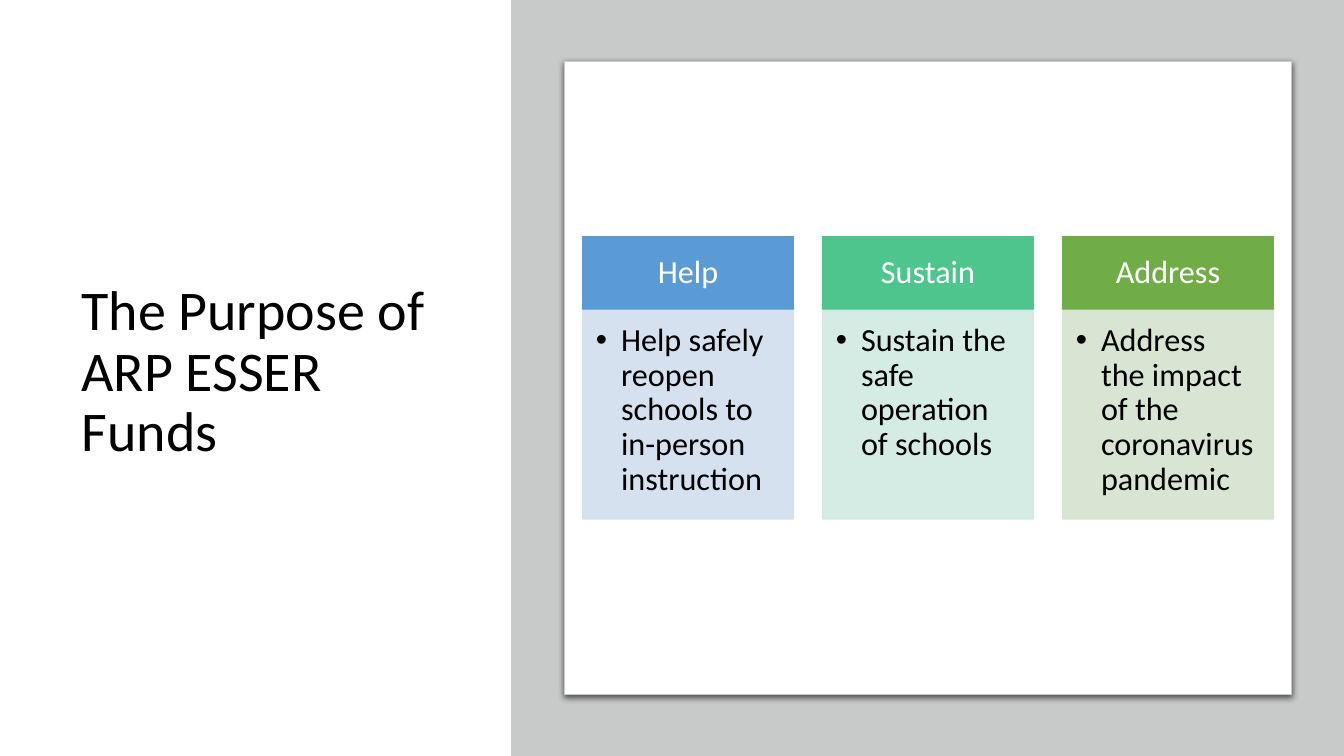
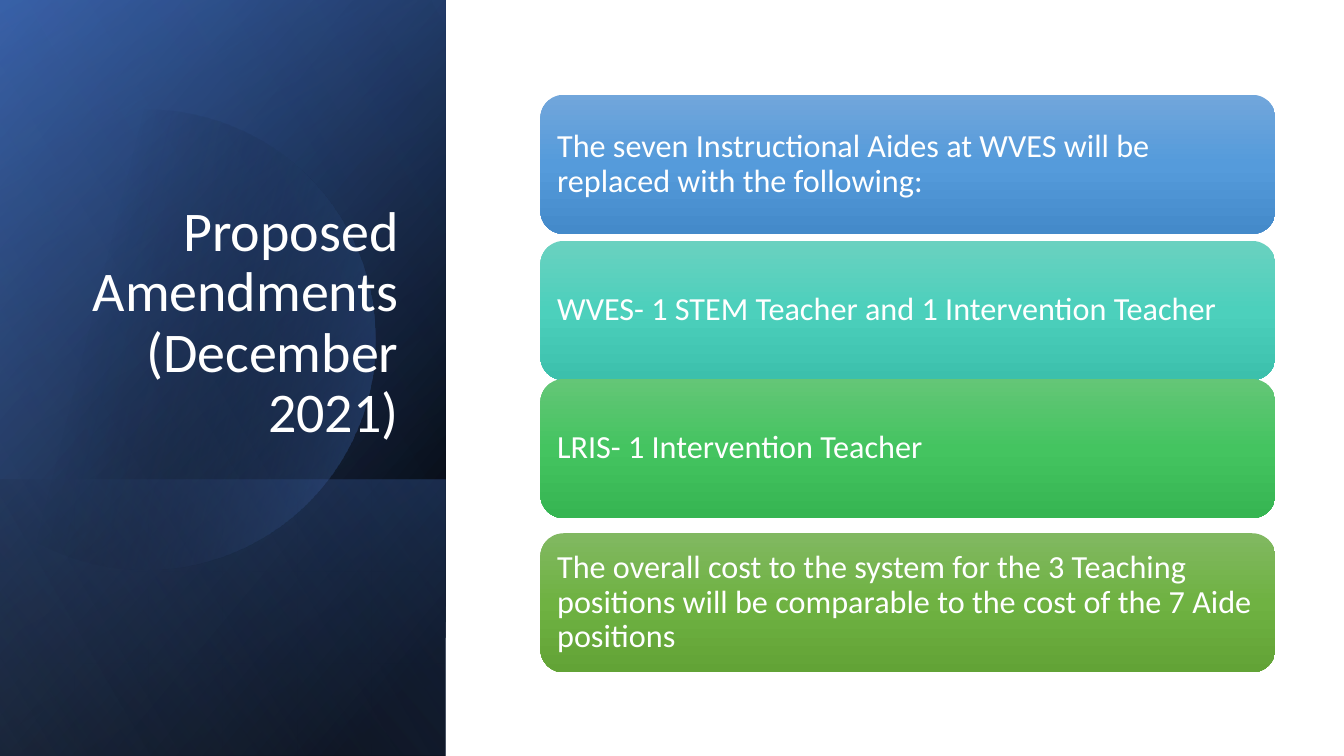
from math import acos, cos, sin

from lxml.etree import SubElement
from pptx import Presentation
from pptx.dml.color import RGBColor
from pptx.enum.shapes import MSO_SHAPE
from pptx.enum.text import MSO_ANCHOR, PP_ALIGN
from pptx.oxml.ns import qn
from pptx.util import Inches, Pt

# Shared style
FONT = "Calibri"
TITLE_SIZE, BODY_SIZE = 40, 23
BLACK = RGBColor(0x00, 0x00, 0x00)
WHITE = RGBColor(0xFF, 0xFF, 0xFF)
GRAY = RGBColor(0xC8, 0xCA, 0xCA)
NAVY = RGBColor(0x2F, 0x55, 0x97)
BLUE = RGBColor(0x44, 0x72, 0xC4)
PALE_BLUE = RGBColor(0x8F, 0xAA, 0xDC)


def write(shape, text, size=BODY_SIZE, color=WHITE, align=PP_ALIGN.LEFT,
          anchor=MSO_ANCHOR.MIDDLE, margins=(0.1, 0.1, 0.1, 0.1), bullet=False):
    """Fill a shape with one formatted paragraph; margins are left, top, right, bottom."""
    frame = shape.text_frame
    frame.word_wrap = True
    frame.vertical_anchor = anchor
    (frame.margin_left, frame.margin_top,
     frame.margin_right, frame.margin_bottom) = map(Inches, margins)
    para = frame.paragraphs[0]
    para.alignment = align
    para.line_spacing = 0.9
    span = para.add_run()
    span.text = text
    span.font.name = FONT
    span.font.size = Pt(size)
    span.font.color.rgb = color
    if bullet:
        properties = para._p.get_or_add_pPr()
        properties.set("marL", str(Inches(0.25)))
        properties.set("indent", str(Inches(-0.25)))
        SubElement(properties, qn("a:buFont"), typeface="Arial")
        SubElement(properties, qn("a:buChar"), char="•")


def shade(shape, angle, stops):
    """Give a shape a clockwise gradient of (position, colour, opacity) stops in percent."""
    shape.shadow.inherit = False
    shape.line.fill.background()
    shape.fill.gradient()
    shape.fill.gradient_angle = (360 - angle) % 360
    stop_list = shape._element.spPr.find(qn("a:gradFill")).find(qn("a:gsLst"))
    for old_stop in list(stop_list):
        stop_list.remove(old_stop)
    for position, color, opacity in stops:
        stop = SubElement(stop_list, qn("a:gs"), pos=str(position * 1000))
        tint = SubElement(stop, qn("a:srgbClr"), val=str(color))
        SubElement(tint, qn("a:alpha"), val=str(opacity * 1000))


deck = Presentation()
deck.slide_width, deck.slide_height = Inches(13.33), Inches(7.5)
blank = deck.slide_layouts[6]

# Slide 1: title, gray band and white card
page = deck.slides.add_slide(blank)
title = page.shapes.add_textbox(Inches(0.71), Inches(0.69), Inches(4.01), Inches(6.02))
write(title, "The Purpose of ARP ESSER Funds", size=TITLE_SIZE, color=BLACK,
      margins=(0.1, 0.05, 0.1, 0.05))

band = page.shapes.add_shape(MSO_SHAPE.RECTANGLE, Inches(5.07), 0, Inches(8.26), Inches(7.5))
card = page.shapes.add_shape(MSO_SHAPE.RECTANGLE, Inches(5.6), Inches(0.61),
                             Inches(7.21), Inches(6.28))
for panel, color in ((band, GRAY), (card, WHITE)):
    panel.shadow.inherit = False
    panel.fill.solid()
    panel.fill.fore_color.rgb = color
band.line.fill.background()
card.line.color.rgb = GRAY
card.line.width = Pt(0.75)
effects = card._element.spPr.find(qn("a:effectLst"))
shadow = SubElement(effects, qn("a:outerShdw"), blurRad=str(Pt(4.5)), dist=str(Pt(1.5)),
                    dir="5400000", algn="t", rotWithShape="0")
shadow_color = SubElement(shadow, qn("a:srgbClr"), val=str(BLACK))
SubElement(shadow_color, qn("a:alpha"), val="63000")

# Slide 1: three columns, each a header over a pale body
columns = [
    ("Help", "Help safely reopen schools to in-person instruction",
     RGBColor(0x5B, 0x9B, 0xD5), RGBColor(0xD2, 0xDE, 0xEF)),
    ("Sustain", "Sustain the safe operation of schools",
     RGBColor(0x4D, 0xC5, 0x8D), RGBColor(0xD0, 0xEA, 0xE1)),
    ("Address", "Address the impact of the coronavirus pandemic",
     RGBColor(0x70, 0xAD, 0x47), RGBColor(0xD5, 0xE3, 0xCF)),
]
for index, (heading, detail, strong, pale) in enumerate(columns):
    left = Inches(5.78 + 2.38 * index)
    header = page.shapes.add_shape(MSO_SHAPE.RECTANGLE, left, Inches(2.35),
                                   Inches(2.09), Inches(0.72))
    body = page.shapes.add_shape(MSO_SHAPE.RECTANGLE, left, Inches(3.08),
                                 Inches(2.09), Inches(2.07))
    for box, color in ((header, strong), (body, pale)):
        box.shadow.inherit = False
        box.fill.solid()
        box.fill.fore_color.rgb = color
        box.line.color.rgb = color
        box.line.width = Pt(1)
    for tint in body._element.spPr.iter(qn("a:srgbClr")):
        SubElement(tint, qn("a:alpha"), val="90000")
    write(header, heading, align=PP_ALIGN.CENTER, margins=(0.18, 0.1, 0.18, 0.1))
    write(body, detail, color=BLACK, anchor=MSO_ANCHOR.TOP,
          margins=(0.13, 0.13, 0.18, 0.2), bullet=True)

# Slide 2: dark side panel built from gradient layers
page = deck.slides.add_slide(blank)
PANEL_WIDTH = 4.42
layers = [
    (0, 7.5, 220, [(8, BLACK, 100), (100, NAVY, 100)]),
    (0, 7.5, 240, [(0, BLACK, 0), (99, BLUE, 46)]),
    (4.76, 2.74, 140, [(2, BLUE, 29), (100, BLACK, 30)]),
]
for top, height, angle, stops in layers:
    layer = page.shapes.add_shape(MSO_SHAPE.RECTANGLE, 0, Inches(top),
                                  Inches(PANEL_WIDTH), Inches(height))
    shade(layer, angle, stops)

# Slide 2: disc cut off by the left edge of the slide
CENTER_X, CENTER_Y, RADIUS, STEPS = 1.44, 3.37, 2.28, 90
limit = acos(-CENTER_X / RADIUS)
turns = [limit * (2 * step / STEPS - 1) for step in range(STEPS + 1)]
points = [(Inches(CENTER_X + RADIUS * cos(turn)), Inches(CENTER_Y + RADIUS * sin(turn)))
          for turn in turns]
outline = page.shapes.build_freeform(*points[0])
outline.add_line_segments(points[1:], close=True)
shade(outline.convert_to_shape(), 14, [(29, BLACK, 0), (100, BLUE, 43)])

glow = page.shapes.add_shape(MSO_SHAPE.RECTANGLE, 0, 0, Inches(PANEL_WIDTH), Inches(7.5))
shade(glow, 150, [(0, BLACK, 0), (99, PALE_BLUE, 11)])

title = page.shapes.add_textbox(Inches(0.64), Inches(1.84), Inches(3.41), Inches(2.62))
write(title, "Proposed Amendments (December 2021)", size=TITLE_SIZE, align=PP_ALIGN.RIGHT,
      anchor=MSO_ANCHOR.BOTTOM, margins=(0.1, 0.05, 0.1, 0.05))

# Slide 2: amendment boxes, each shaded from light to dark
amendments = [
    (0.94, "The seven Instructional Aides at WVES will be replaced with the following:",
     RGBColor(0x71, 0xA6, 0xDB), RGBColor(0x55, 0x9B, 0xDB), RGBColor(0x44, 0x8A, 0xCA)),
    (2.39, "WVES- 1 STEM Teacher and 1 Intervention Teacher",
     RGBColor(0x6A, 0xD1, 0xC0), RGBColor(0x4C, 0xD0, 0xBC), RGBColor(0x3C, 0xC0, 0xAC)),
    (3.76, "LRIS- 1 Intervention Teacher",
     RGBColor(0x64, 0xC6, 0x77), RGBColor(0x44, 0xC4, 0x60), RGBColor(0x36, 0xB5, 0x52)),
    (5.29, "The overall cost to the system for the 3 Teaching positions will be comparable "
     "to the cost of the 7 Aide positions",
     RGBColor(0x81, 0xB8, 0x61), RGBColor(0x6F, 0xB2, 0x42), RGBColor(0x62, 0xA3, 0x36)),
]
for top, text, light, middle, dark in amendments:
    box = page.shapes.add_shape(MSO_SHAPE.ROUNDED_RECTANGLE, Inches(5.36), Inches(top),
                                Inches(7.29), Inches(1.38))
    shade(box, 90, [(0, light, 100), (50, middle, 100), (100, dark, 100)])
    write(box, text)

deck.save("out.pptx")
